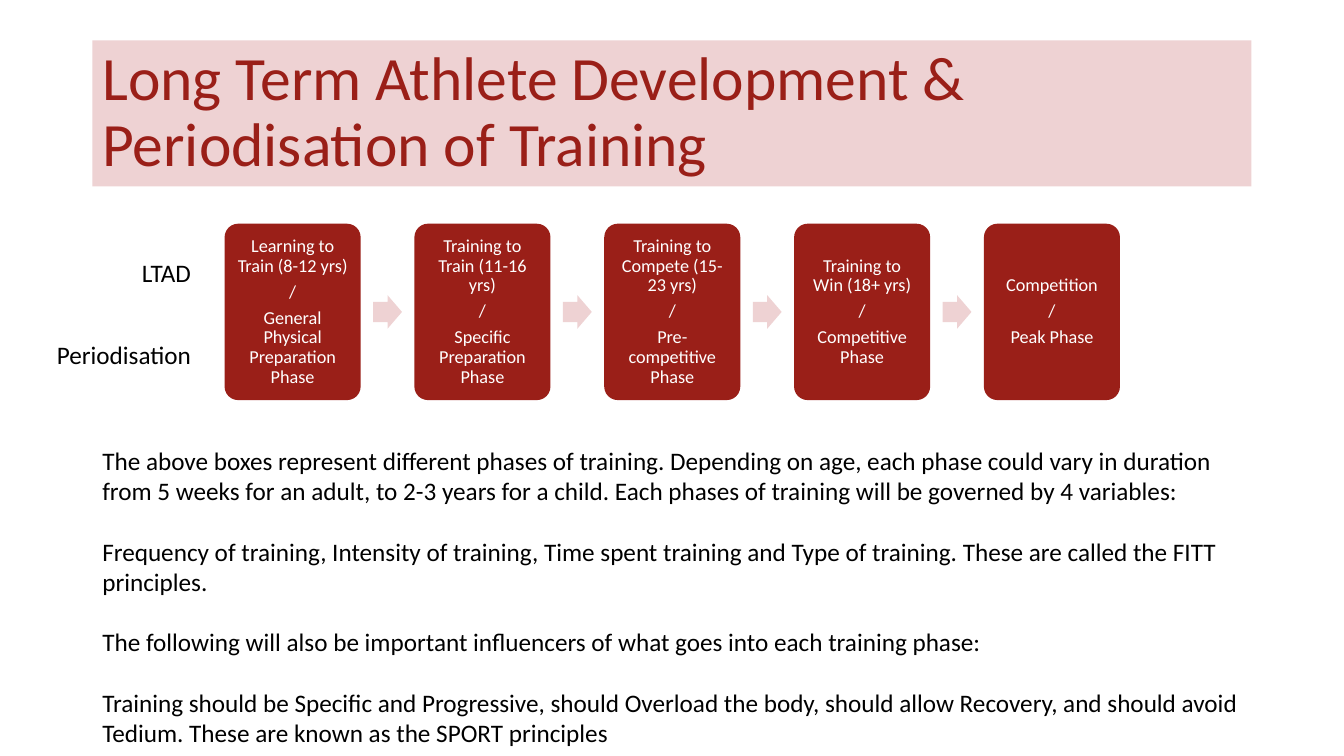
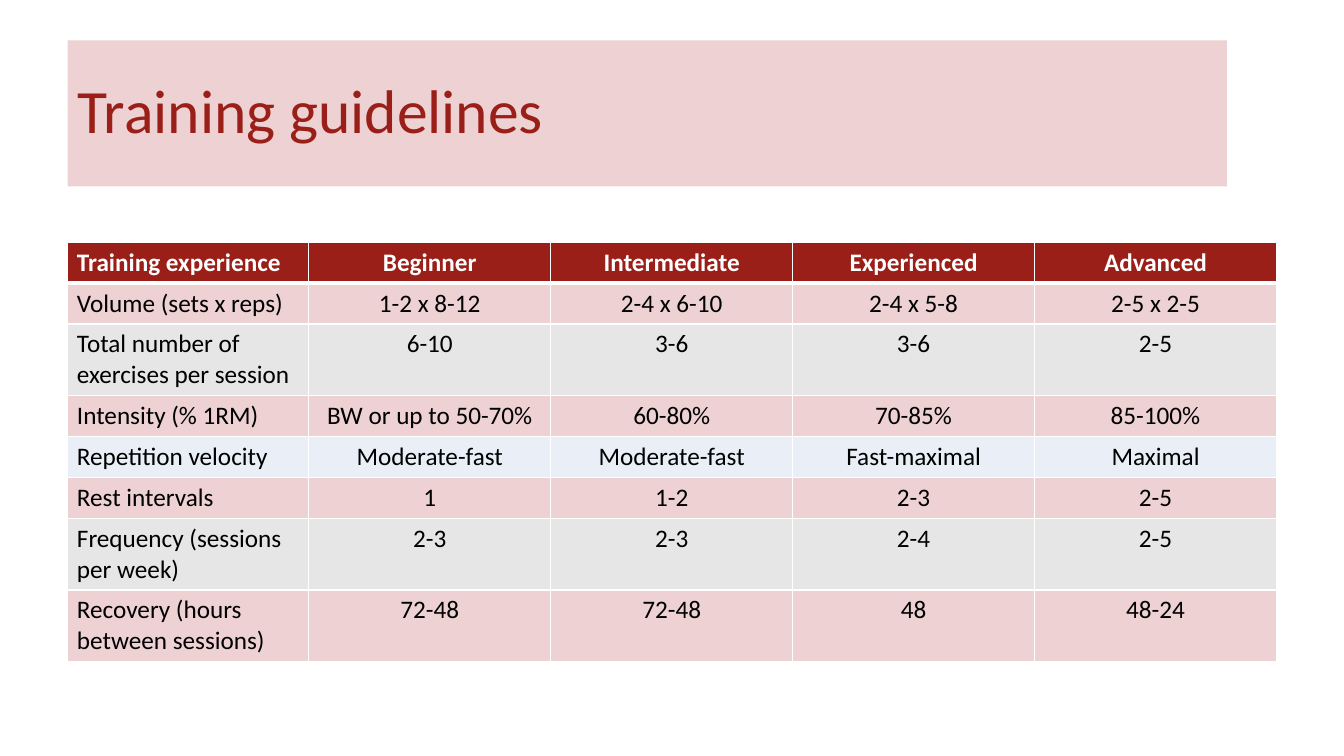
from lxml import etree
from pptx import Presentation
from pptx.dml.color import RGBColor
from pptx.enum.shapes import MSO_SHAPE
from pptx.enum.text import MSO_ANCHOR, PP_ALIGN
from pptx.oxml.ns import qn
from pptx.util import Pt

RECTANGLE = MSO_SHAPE.RECTANGLE
ROUNDED = MSO_SHAPE.ROUNDED_RECTANGLE
ARROW = MSO_SHAPE.RIGHT_ARROW
TOP, MIDDLE = MSO_ANCHOR.TOP, MSO_ANCHOR.MIDDLE
LEFT, CENTER, RIGHT = PP_ALIGN.LEFT, PP_ALIGN.CENTER, PP_ALIGN.RIGHT

FONT = "Calibri"
RED, PINK, GREY, PALE_BLUE = "9A1F18", "EED2D3", "E7E6E6", "EAEFF7"
WHITE, BLACK = "FFFFFF", "000000"

TITLE_FORMAT = {"size": 44, "color": RED, "line_spacing": 0.9}
BODY_FORMAT = {"size": 18, "color": BLACK}
LABEL_FORMAT = {**BODY_FORMAT, "alignment": RIGHT}
PHASE_FORMAT = {"size": 13, "color": WHITE, "alignment": CENTER,
                "line_spacing": 0.9, "space_after": Pt(4.5)}
HEADER_FORMAT = {"size": 18, "color": WHITE, "bold": True}

PHASES_TITLE = "Long Term Athlete Development & Periodisation of Training"
PHASES = [
    ("Learning to Train (8-12 yrs)", "General Physical Preparation Phase"),
    ("Training to Train (11-16 yrs)", "Specific Preparation Phase"),
    ("Training to Compete (15-23 yrs)", "Pre-competitive Phase"),
    ("Training to Win (18+ yrs)", "Competitive Phase"),
    ("Competition", "Peak Phase"),
]
ROW_LABELS = [("LTAD", 180), ("Periodisation", 239)]
EXPLANATION = [
    "The above boxes represent different phases of training. Depending on age, "
    "each phase could vary in duration from 5 weeks for an adult, to 2-3 years "
    "for a child. Each phases of training will be governed by 4 variables:",
    "Frequency of training, Intensity of training, Time spent training and Type "
    "of training. These are called the FITT principles.",
    "The following will also be important influencers of what goes into each "
    "training phase:",
    "Training should be Specific and Progressive, should Overload the body, "
    "should allow Recovery, and should avoid Tedium. These are known as the "
    "SPORT principles",
]

GUIDELINES_TITLE = "Training guidelines"
GUIDELINES = [
    (RED, 29.2, ("Training experience", "Beginner", "Intermediate",
                 "Experienced", "Advanced")),
    (PINK, 29.2, ("Volume (sets x reps)", "1-2 x 8-12", "2-4 x 6-10",
                  "2-4 x 5-8", "2-5 x 2-5")),
    (GREY, 51.2, ("Total number of exercises per session", "6-10", "3-6",
                  "3-6", "2-5")),
    (PINK, 29.2, ("Intensity (% 1RM)", "BW or up to 50-70%", "60-80%",
                  "70-85%", "85-100%")),
    (PALE_BLUE, 29.2, ("Repetition velocity", "Moderate-fast",
                       "Moderate-fast", "Fast-maximal", "Maximal")),
    (PINK, 29.2, ("Rest intervals", "1", "1-2", "2-3", "2-5")),
    (GREY, 51.2, ("Frequency (sessions per week)", "2-3", "2-3", "2-4",
                  "2-5")),
    (PINK, 51.2, ("Recovery (hours between sessions)", "72-48", "72-48",
                  "48", "48-24")),
]


def color(value):
    return RGBColor.from_string(value)


def write(frame, texts, text_format):
    paragraph_format = {"alignment": LEFT, **text_format}
    size = paragraph_format.pop("size")
    text_color = paragraph_format.pop("color")
    bold = paragraph_format.pop("bold", False)
    for index, text in enumerate(texts):
        paragraph = frame.add_paragraph() if index else frame.paragraphs[0]
        for name, value in paragraph_format.items():
            setattr(paragraph, name, value)
        run = paragraph.add_run()
        run.text = text
        for name, value in {"name": FONT, "size": Pt(size), "bold": bold}.items():
            setattr(run.font, name, value)
        run.font.color.rgb = color(text_color)


def add_block(slide, kind, box, fill, adjustments=()):
    shape = slide.shapes.add_shape(kind, *map(Pt, box))
    shape.shadow.inherit = False
    shape.fill.solid()
    shape.fill.fore_color.rgb = color(fill)
    shape.line.fill.background()
    for index, value in enumerate(adjustments):
        shape.adjustments[index] = value
    shape.text_frame.vertical_anchor = MIDDLE
    return shape


def add_text(slide, box, texts, text_format, wrap=True):
    frame = slide.shapes.add_textbox(*map(Pt, box)).text_frame
    frame.word_wrap = wrap
    frame.vertical_anchor = TOP
    write(frame, texts, text_format)


def add_titled_slide(presentation, title, left):
    slide = presentation.slides.add_slide(presentation.slide_layouts[6])
    band = add_block(slide, RECTANGLE, (left, 28.8, 828, 104.4), PINK)
    write(band.text_frame, [title], TITLE_FORMAT)
    return slide


def add_phases(slide):
    left, top, width, height, step = 160.4, 159.8, 97.2, 126, 135.6
    arrow_width, arrow_height = 20.6, 24
    for index, (stage, period) in enumerate(PHASES):
        x = left + index * step
        card = add_block(slide, ROUNDED, (x, top, width, height), RED, [0.1])
        for side in ("left", "right", "top", "bottom"):
            setattr(card.text_frame, f"margin_{side}", Pt(6.5))
        write(card.text_frame, [stage, "/", period], PHASE_FORMAT)
        if index < len(PHASES) - 1:
            arrow_left = x + (width + step - arrow_width) / 2
            arrow_top = top + (height - arrow_height) / 2
            add_block(slide, ARROW,
                      (arrow_left, arrow_top, arrow_width, arrow_height),
                      PINK, [0.6, 0.5])


def set_borders(cell, widths):
    properties = cell._tc.get_or_add_tcPr()
    for side, width in widths.items():
        line = etree.SubElement(properties, qn(f"a:ln{side}"), w=str(Pt(width)))
        fill = etree.SubElement(line, qn("a:solidFill"))
        etree.SubElement(fill, qn("a:srgbClr"), val=WHITE)


def add_guidelines(slide):
    column_count = len(GUIDELINES[0][2])
    total_height = sum(height for _, height, _ in GUIDELINES)
    table = slide.shapes.add_table(len(GUIDELINES), column_count, Pt(47.8),
                                   Pt(173), Pt(864), Pt(total_height)).table
    for row, (fill, height, texts) in enumerate(GUIDELINES):
        table.rows[row].height = Pt(height)
        row_format = BODY_FORMAT if row else HEADER_FORMAT
        borders = {"L": 1, "R": 1, "T": 3 if row == 1 else 1,
                   "B": 1 if row else 3}
        for column, text in enumerate(texts):
            cell = table.cell(row, column)
            set_borders(cell, borders)
            cell.fill.solid()
            cell.fill.fore_color.rgb = color(fill)
            alignment = CENTER if column else LEFT
            write(cell.text_frame, [text], {**row_format, "alignment": alignment})


def main():
    presentation = Presentation()
    presentation.slide_width, presentation.slide_height = Pt(960), Pt(540)

    slide = add_titled_slide(presentation, PHASES_TITLE, 66)
    add_phases(slide)
    add_text(slide, (66, 314.6, 831.6, 225.4), EXPLANATION,
             {**BODY_FORMAT, "space_after": Pt(21.6)})
    for label, top in ROW_LABELS:
        add_text(slide, (31.5, top, 112, 29), [label], LABEL_FORMAT)

    slide = add_titled_slide(presentation, GUIDELINES_TITLE, 48.4)
    add_guidelines(slide)

    presentation.save("out.pptx")


if __name__ == "__main__":
    main()
